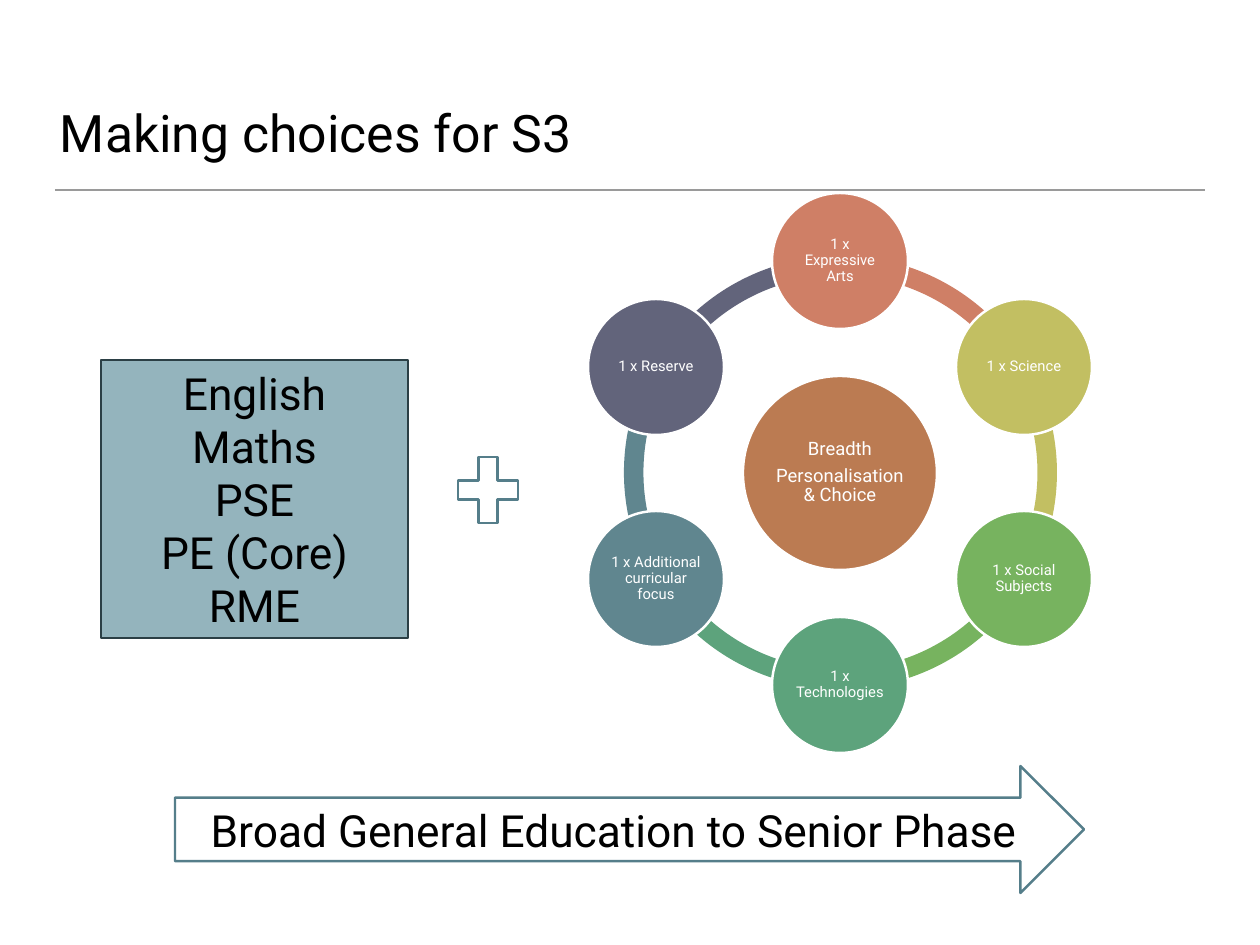
import math
from lxml import etree
from pptx import Presentation, util as u
from pptx.dml.color import RGBColor
from pptx.enum import shapes, text
from pptx.oxml.ns import qn

THEME = {
    "font": "Roboto",
    "title_size": 42, "body_size": 36, "hub_size": 15, "node_size": 12,
    "ink": "000000", "paper": "FFFFFF", "rule": "9A9A9A", "outline": "557E8A",
    "box": "94B4BD", "box_edge": "2B3F45", "hub": "BB7B52",
    "arts": "CF7F66", "science": "C2BF62", "social": "77B35F",
    "technologies": "5DA37C", "additional": "60868F", "reserve": "62647B",
}
PX = 10321  # EMU per px
SHAPE = shapes.MSO_SHAPE


def add_block(kind, left, top, width, height, fill, line=None):
    shape = slide.shapes.add_shape(
        kind, *(round(value) * PX for value in (left, top, width, height)))
    shape.shadow.inherit = False
    shape.fill.solid()
    shape.fill.fore_color.rgb = RGBColor.from_string(THEME[fill])
    if line:
        shape.line.color.rgb = RGBColor.from_string(THEME[line])
        shape.line.width = u.Pt(2)
    else:
        shape.line.fill.background()
    return shape


def write_text(shape, lines, size, color="ink", align="CENTER", anchor="MIDDLE",
               inset=5, line_spacing=None, space_after=None):
    frame = shape.text_frame
    frame.word_wrap = True
    frame.vertical_anchor = text.MSO_ANCHOR[anchor]
    frame.margin_left = frame.margin_right = inset * PX
    frame.margin_top = frame.margin_bottom = inset * PX
    frame.text = "\n".join(lines)
    for paragraph in frame.paragraphs:
        paragraph.alignment = text.PP_ALIGN[align]
        paragraph.line_spacing = line_spacing
        paragraph.space_after = space_after
        paragraph.font.name = THEME["font"]
        paragraph.font.size = u.Pt(THEME[size])
        paragraph.font.color.rgb = RGBColor.from_string(THEME[color])


presentation = Presentation()
presentation.slide_width = 1260 * PX
presentation.slide_height = 945 * PX
slide = presentation.slides.add_slide(presentation.slide_layouts[6])

# Title and rule
rule = slide.shapes.add_connector(
    shapes.MSO_CONNECTOR.STRAIGHT, 55 * PX, 190 * PX, 1205 * PX, 190 * PX)
rule.line.color.rgb = RGBColor.from_string(THEME["rule"])
rule.line.width = u.Pt(1)
etree.SubElement(rule._element.spPr, qn("a:effectLst"))
title = slide.shapes.add_textbox(55 * PX, 32 * PX, 1149 * PX, 136 * PX)
write_text(title, ["Making choices for S3"], "title_size", align="LEFT", anchor="BOTTOM")

# Arrow to the senior phase
phase_arrow = add_block(SHAPE.RIGHT_ARROW, 175, 766, 909, 127, "paper", "outline")
write_text(phase_arrow, ["Broad General Education to Senior Phase"], "body_size")

# Wheel of choices, clockwise from the top
CENTER_X, CENTER_Y = 840, 473
ORBIT, RING, HUB, NODE = 212, 433, 194, 136
choices = [
    ("1 x Expressive Arts", "arts"),
    ("1 x Science", "science"),
    ("1 x Social Subjects", "social"),
    ("1 x Technologies", "technologies"),
    ("1 x Additional curricular focus", "additional"),
    ("1 x Reserve", "reserve"),
]
STEP = 360 // len(choices)
angles = [(270 + STEP * index) % 360 for index in range(len(choices))]

# Ring: each arc runs from its own choice to the next
for angle, (label, color) in reversed(list(zip(angles, choices))):
    arc = add_block(SHAPE.BLOCK_ARC, CENTER_X - RING / 2, CENTER_Y - RING / 2,
                    RING, RING, color)
    # Adjustments count 60000ths of a degree in units of 100000
    arc.adjustments[0] = angle * 0.6
    arc.adjustments[1] = (angle + STEP) % 360 * 0.6
    arc.adjustments[2] = 0.045

# Hub
hub = add_block(SHAPE.OVAL, CENTER_X - HUB / 2, CENTER_Y - HUB / 2, HUB, HUB, "hub", "paper")
write_text(hub, ["Breadth", "Personalisation & Choice"], "hub_size", "paper",
           inset=2, line_spacing=0.9, space_after=u.Pt(5))

# Choices
for angle, (label, color) in zip(angles, choices):
    left = CENTER_X + ORBIT * math.cos(math.radians(angle)) - NODE / 2
    top = CENTER_Y + ORBIT * math.sin(math.radians(angle)) - NODE / 2
    node = add_block(SHAPE.OVAL, left, top, NODE, NODE, color, "paper")
    write_text(node, [label], "node_size", "paper",
               inset=2, line_spacing=0.9, space_after=u.Pt(4))

# Core subjects and plus sign
core_box = add_block(SHAPE.RECTANGLE, 101, 360, 307, 278, "box", "box_edge")
write_text(core_box, ["English", "Maths", "PSE", "PE (Core)", "RME"], "body_size")
add_block(SHAPE.MATH_PLUS, 447, 445, 82, 90, "paper", "outline")

presentation.save("out.pptx")
